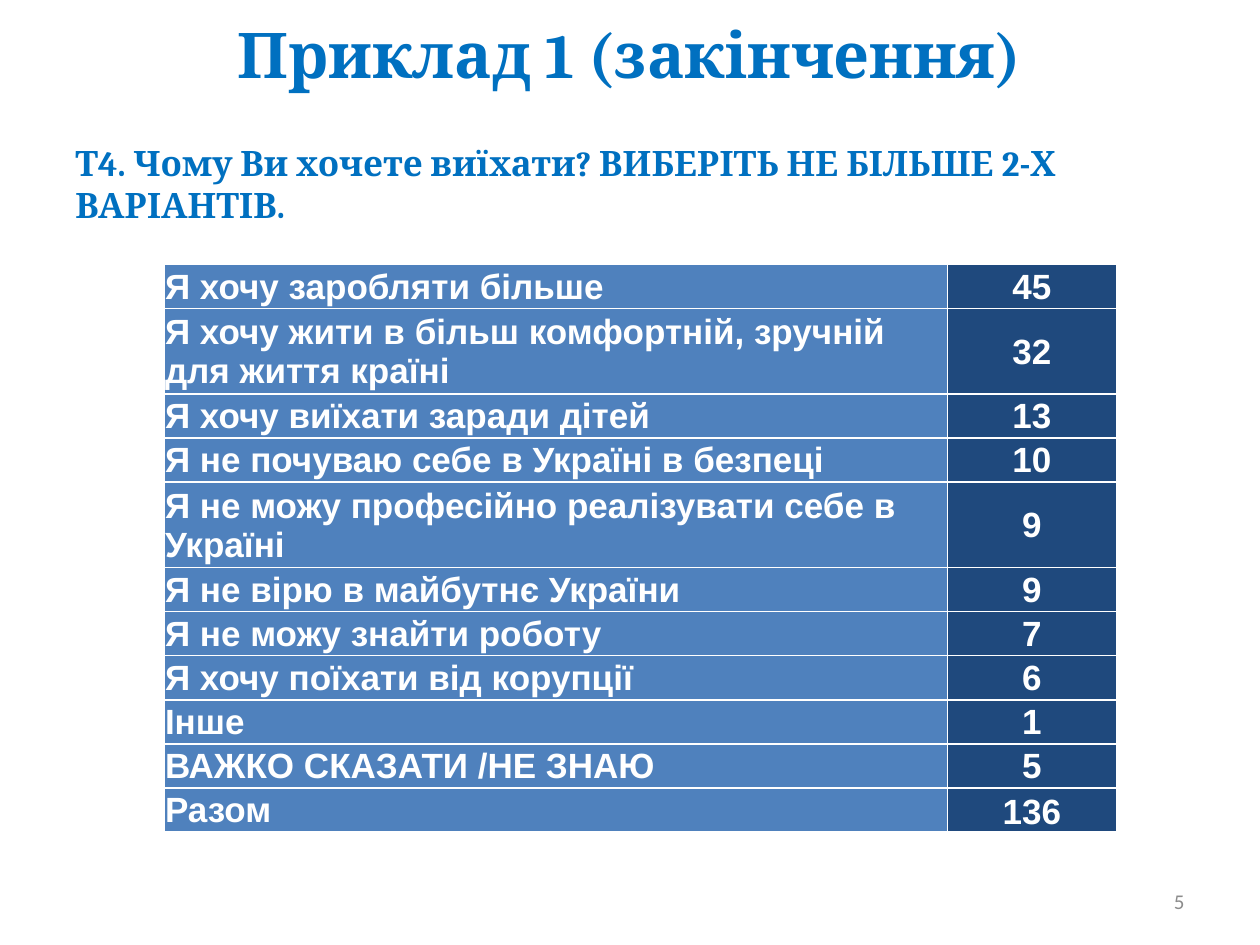
from lxml.etree import SubElement
from pptx import Presentation
from pptx.dml.color import RGBColor
from pptx.enum.text import MSO_ANCHOR as ANCHOR, PP_ALIGN as ALIGN
from pptx.oxml.ns import qn
from pptx.util import Inches, Pt

COLORS = {
    "heading": "0070C0",
    "label": "4F81BD",
    "value": "1F497D",
    "light": "FFFFFF",
    "number": "8C8C8C",
}

ANSWERS = [
    ("Я хочу заробляти більше", 45),
    ("Я хочу жити в більш комфортній, зручній для життя країні", 32),
    ("Я хочу виїхати заради дітей", 13),
    ("Я не почуваю себе в Україні в безпеці", 10),
    ("Я не можу професійно реалізувати себе в Україні", 9),
    ("Я не вірю в майбутнє України", 9),
    ("Я не можу знайти роботу", 7),
    ("Я хочу поїхати від корупції", 6),
    ("Інше", 1),
    ("ВАЖКО СКАЗАТИ /НЕ ЗНАЮ", 5),
    ("Разом", 136),
]
COLUMN_WIDTHS = (6.22, 1.34)
ROW_HEIGHT, TALL_ROW, TALL_HEIGHT = 0.35, 1, 0.67


class SlideBuilder:
    """Holds the slide and its style, and adds elements to it."""

    def __init__(self, slide, colors):
        self.slide = slide
        self.colors = colors

    def rgb(self, name):
        return RGBColor.from_string(self.colors[name])

    def set_text(self, tf, text, size, font, color, bold, align):
        tf.text = text
        p = tf.paragraphs[0]
        p.alignment = align
        r = p.runs[0]
        r.font.size = Pt(size)
        r.font.name = font
        r.font.bold = bold
        r.font.color.rgb = self.rgb(color)

    def text(self, text, box, size, font, color, bold=True,
             align=ALIGN.LEFT, anchor=ANCHOR.MIDDLE):
        sp = self.slide.shapes.add_textbox(*map(Inches, box))
        tf = sp.text_frame
        tf.word_wrap = True
        tf.vertical_anchor = anchor
        self.set_text(tf, text, size, font, color, bold, align)

    def borders(self, cell):
        tc_pr = cell._tc.get_or_add_tcPr()
        for i, side in enumerate(("lnL", "lnR", "lnT", "lnB")):
            ln = SubElement(tc_pr, qn(f"a:{side}"), w=str(Pt(1)))
            fill = SubElement(ln, qn("a:solidFill"))
            SubElement(fill, qn("a:srgbClr"), val=self.colors["light"])
            tc_pr.insert(i, ln)  # borders come before the cell fill

    def cell(self, cell, text, fill, align, anchor):
        cell.margin_left = cell.margin_right = cell.margin_top = Inches(0.01)
        cell.margin_bottom = 0
        cell.vertical_anchor = anchor
        cell.fill.solid()
        cell.fill.fore_color.rgb = self.rgb(fill)
        self.set_text(cell.text_frame, text, 20, "Arial", "light", True, align)
        self.borders(cell)

    def table(self, rows, left, top, widths, heights):
        frame = self.slide.shapes.add_table(
            len(rows), len(widths), Inches(left), Inches(top),
            Inches(sum(widths)), Inches(sum(heights)))
        table = frame.table
        table.first_row = table.horz_banding = False
        for column, width in zip(table.columns, widths):
            column.width = Inches(width)
        for i, ((label, value), height) in enumerate(zip(rows, heights)):
            table.rows[i].height = Inches(height)
            # The total sits at the bottom of its cell
            anchor = ANCHOR.BOTTOM if i == len(rows) - 1 else ANCHOR.MIDDLE
            self.cell(table.cell(i, 0), label, "label", ALIGN.LEFT, ANCHOR.MIDDLE)
            self.cell(table.cell(i, 1), str(value), "value", ALIGN.CENTER, anchor)


def main():
    prs = Presentation()
    prs.slide_width, prs.slide_height = Inches(10), Inches(7.5)
    s = SlideBuilder(prs.slides.add_slide(prs.slide_layouts[6]), COLORS)

    # Title and survey question
    s.text("Приклад 1 (закінчення)", (0.9, 0, 8.19, 0.84), 36, "Cambria",
           "heading", align=ALIGN.CENTER)
    s.text("Т4. Чому Ви хочете виїхати? ВИБЕРІТЬ НЕ БІЛЬШЕ 2-Х ВАРІАНТІВ.",
           (0.5, 1.07, 9, 5.63), 20, "Cambria", "heading", anchor=ANCHOR.TOP)

    # Slide number
    s.text("5", (7.17, 6.95, 2.33, 0.4), 12, "Calibri", "number",
           bold=False, align=ALIGN.RIGHT)

    # Answers
    heights = [TALL_HEIGHT if i == TALL_ROW else ROW_HEIGHT
               for i in range(len(ANSWERS))]
    s.table(ANSWERS, 1.3, 2.1, COLUMN_WIDTHS, heights)

    prs.save("out.pptx")


if __name__ == "__main__":
    main()
